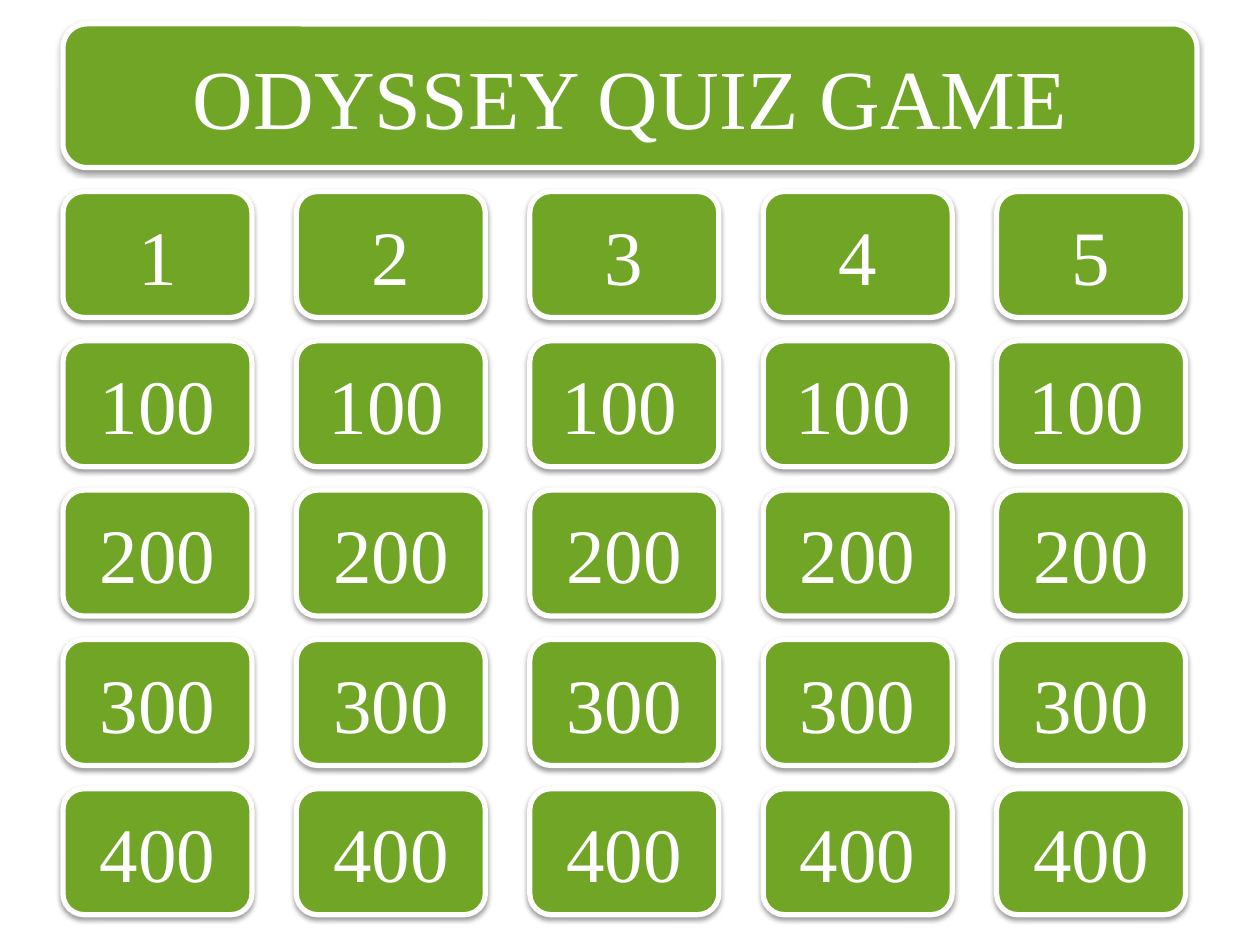
from lxml.etree import SubElement
from pptx import Presentation
from pptx.dml.color import RGBColor
from pptx.enum.shapes import MSO_SHAPE as Shape
from pptx.enum.text import MSO_ANCHOR as Anchor, MSO_AUTO_SIZE as AutoSize, PP_ALIGN as Align
from pptx.oxml.ns import qn
from pptx.util import Inches, Pt

HEADING = "ODYSSEY QUIZ GAME"
CATEGORIES = ["1", "2", "3", "4", "5"]
POINTS = ["100", "200", "300", "400"]
BOARD = [CATEGORIES] + [[value] * len(CATEGORIES) for value in POINTS]

GREEN, WHITE, BLACK = "70A525", "FFFFFF", "000000"
FONT = "Times New Roman"
LEFT, LAST_LEFT = 0.5, 7.91
TOP, LAST_TOP = 1.52, 6.26
TILE_WIDTH, TILE_HEIGHT = 1.5, 1
HEADING_BOX = (LEFT, 0.19, 9, 1.14)
COLUMN_STEP = (LAST_LEFT - LEFT) / (len(CATEGORIES) - 1)
ROW_STEP = (LAST_TOP - TOP) / (len(BOARD) - 1)


def color(value):
    return RGBColor.from_string(value)


def add_shadow(tile):
    tile.shadow.inherit = False
    effects = tile.element.spPr.find(qn("a:effectLst"))
    shadow = SubElement(effects, qn("a:outerShdw"), blurRad=str(Pt(3.1)),
                        dist=str(Pt(1.6)), dir="5400000", rotWithShape="0")
    tint = SubElement(shadow, qn("a:srgbClr"), val=BLACK)
    SubElement(tint, qn("a:alpha"), val="38000")


def add_tile(slide, box):
    tile = slide.shapes.add_shape(Shape.ROUNDED_RECTANGLE, *map(Inches, box))
    tile.fill.solid()
    tile.fill.fore_color.rgb = color(GREEN)
    tile.line.color.rgb = color(WHITE)
    tile.line.width = Pt(3)
    add_shadow(tile)
    return tile


def write(holder, text, size=44, font=FONT, ink=WHITE, right=0.1):
    frame = holder.text_frame
    frame.word_wrap = True
    frame.auto_size = AutoSize.NONE
    frame.vertical_anchor = Anchor.MIDDLE
    frame.margin_right = Inches(right)
    paragraph = frame.paragraphs[0]
    paragraph.alignment = Align.CENTER
    run = paragraph.add_run()
    run.text = text
    run.font.size = Pt(size)
    run.font.name = font
    run.font.color.rgb = color(ink)


def add_heading(slide):
    banner = add_tile(slide, HEADING_BOX)
    heading = slide.shapes.title
    heading.left, heading.top, heading.width, heading.height = map(Inches, HEADING_BOX)
    banner.element.addnext(heading.element)
    write(heading, HEADING, size=48)


def add_board(slide):
    for row, values in enumerate(BOARD):
        for column, value in enumerate(values):
            tile = add_tile(slide, (LEFT + column * COLUMN_STEP, TOP + row * ROW_STEP,
                                    TILE_WIDTH, TILE_HEIGHT))
            shifted = value == POINTS[0] and column > 0
            write(tile, value, right=0.17 if shifted else 0.1)


def main():
    deck = Presentation()
    deck.slide_width, deck.slide_height = Inches(10), Inches(7.5)
    slide = deck.slides.add_slide(deck.slide_layouts[5])
    add_heading(slide)
    add_board(slide)
    deck.save("out.pptx")


if __name__ == "__main__":
    main()
